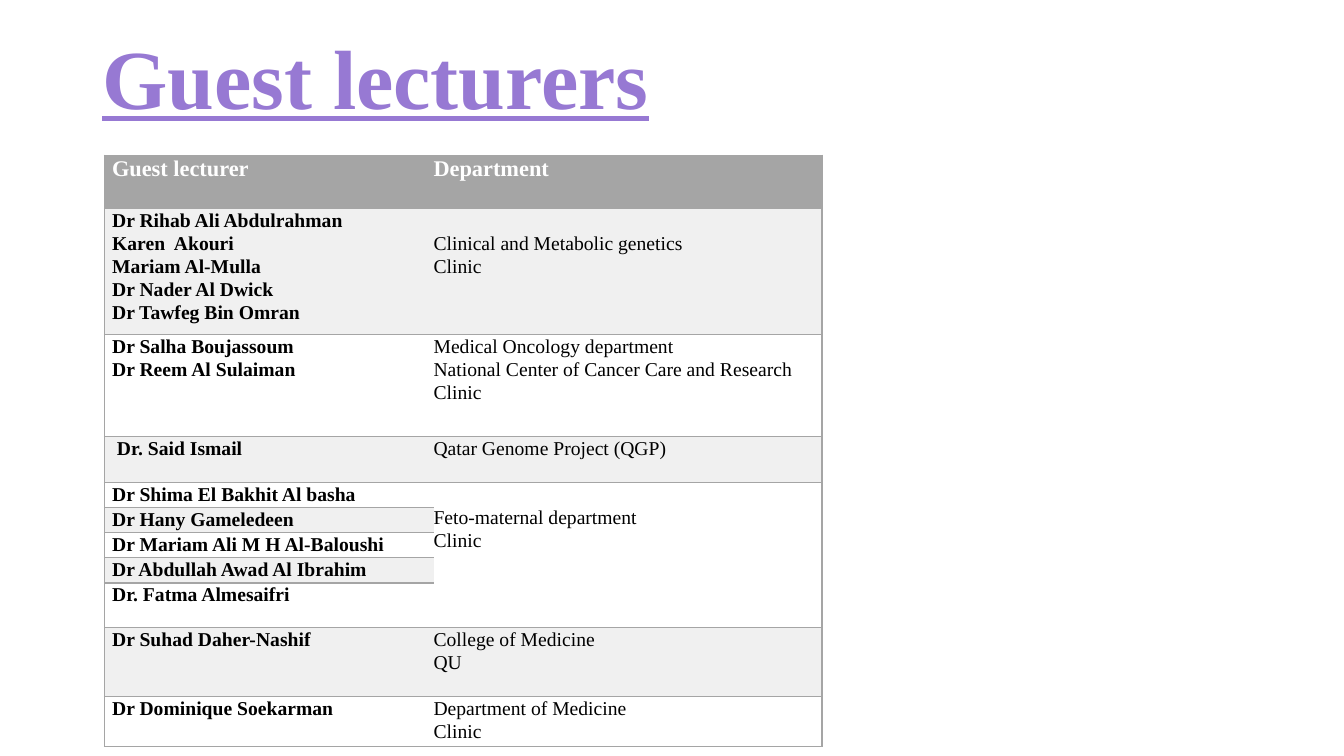
import pptx
import pptx.dml.color
import pptx.enum.text
import pptx.oxml
import pptx.oxml.ns
import pptx.util

Pt = pptx.util.Pt
RGBColor = pptx.dml.color.RGBColor

PURPLE = RGBColor(0x97, 0x79, 0xD3)
GREY = RGBColor(0xA5, 0xA5, 0xA5)
PALE = RGBColor(0xF0, 0xF0, 0xF0)
WHITE = RGBColor(0xFF, 0xFF, 0xFF)
BLACK = RGBColor(0, 0, 0)
FONT = "Times New Roman"

COLUMN_WIDTHS = (235, 277.5)
LINE_GAP = 16.6
SIDES = "LRTB"
DRAWN_SIDES = ("LTB", "RTB")
FETAL_ROWS = (4, 8)

ROWS = [
    (37.9, ["Guest lecturer"], ["Department"]),
    (87.1, ["Dr Rihab Ali Abdulrahman", "Karen  Akouri", "Mariam Al-Mulla",
            "Dr Nader Al Dwick", "Dr Tawfeg Bin Omran"],
     ["Clinical and Metabolic genetics", "Clinic"]),
    (72.9, ["Dr Salha Boujassoum", "Dr Reem Al Sulaiman"],
     ["Medical Oncology department", "National Center of Cancer Care and Research", "Clinic"]),
    (32.9, [" Dr. Said Ismail"], ["Qatar Genome Project (QGP)"]),
    (16.5, ["Dr Shima El Bakhit Al basha"], ["Feto-maternal department", "Clinic"]),
    (17.6, ["Dr Hany Gameledeen"], []),
    (16.5, ["Dr Mariam Ali M H Al-Baloushi"], []),
    (16.8, ["Dr Abdullah Awad Al Ibrahim"], []),
    (31.5, ["Dr. Fatma Almesaifri"], []),
    (49.3, ["Dr Suhad Daher-Nashif"], ["College of Medicine", "QU"]),
    (33.6, ["Dr Dominique Soekarman"], ["Department of Medicine", "Clinic"]),
]
LOWERED_ROWS = (1, 4)


def write_lines(frame, lines, size, color, bold, spacing, underline=False):
    for index, line in enumerate(lines):
        para = frame.paragraphs[0] if index == 0 else frame.add_paragraph()
        para.text = line
        para.line_spacing = spacing
        para.font.name = FONT
        para.font.size = Pt(size)
        para.font.bold = bold
        para.font.underline = underline
        para.font.color.rgb = color


def add_title(page, text):
    box = page.shapes.add_textbox(Pt(66), Pt(6.5), Pt(828), Pt(104.4))
    frame = box.text_frame
    frame.word_wrap = True
    frame.vertical_anchor = pptx.enum.text.MSO_ANCHOR.MIDDLE
    write_lines(frame, [text], 60, PURPLE, True, 0.9, underline=True)


def set_borders(cell, drawn_sides):
    properties = cell._tc.get_or_add_tcPr()
    namespace = pptx.oxml.ns.nsdecls("a")
    for side in SIDES:
        paint = "<a:noFill/>"
        if side in drawn_sides:
            paint = f'<a:solidFill><a:srgbClr val="{GREY}"/></a:solidFill>'
        properties.append(pptx.oxml.parse_xml(
            f'<a:ln{side} {namespace} w="{Pt(1)}">{paint}</a:ln{side}>'))


def fill_cell(cell, row, column, lines):
    header = row == 0
    set_borders(cell, DRAWN_SIDES[column])
    cell.fill.solid()
    cell.fill.fore_color.rgb = GREY if header else PALE if row % 2 else WHITE
    cell.margin_left = cell.margin_right = Pt(0 if column else 5.4)
    lowered = column == 1 and row in LOWERED_ROWS
    cell.margin_top = Pt(LINE_GAP if lowered else 0)
    cell.margin_bottom = Pt(0)
    write_lines(cell.text_frame, lines, 16 if header else 14,
                WHITE if header else BLACK, header or column == 0, 1.07)


def add_lecturer_table(page):
    height = sum(row[0] for row in ROWS)
    frame = page.shapes.add_table(len(ROWS), len(COLUMN_WIDTHS), Pt(74.7), Pt(110.9),
                                  Pt(sum(COLUMN_WIDTHS)), Pt(height))
    table = frame.table
    table.first_row = False
    table.horz_banding = False
    for column, width in zip(table.columns, COLUMN_WIDTHS):
        column.width = Pt(width)
    first, last = FETAL_ROWS
    table.cell(first, 1).merge(table.cell(last, 1))
    for row, (row_height, *contents) in enumerate(ROWS):
        table.rows[row].height = Pt(row_height)
        for column, lines in enumerate(contents):
            cell = table.cell(row, column)
            if cell.is_spanned:
                write_lines(cell.text_frame, [""], 14, BLACK, False, 1)
                cell.margin_top = cell.margin_bottom = Pt(0)
            else:
                fill_cell(cell, row, column, lines)


def main():
    deck = pptx.Presentation()
    deck.slide_width = Pt(960)
    deck.slide_height = Pt(540)
    page = deck.slides.add_slide(deck.slide_layouts[6])
    add_title(page, "Guest lecturers")
    add_lecturer_table(page)
    deck.save("out.pptx")


if __name__ == "__main__":
    main()
